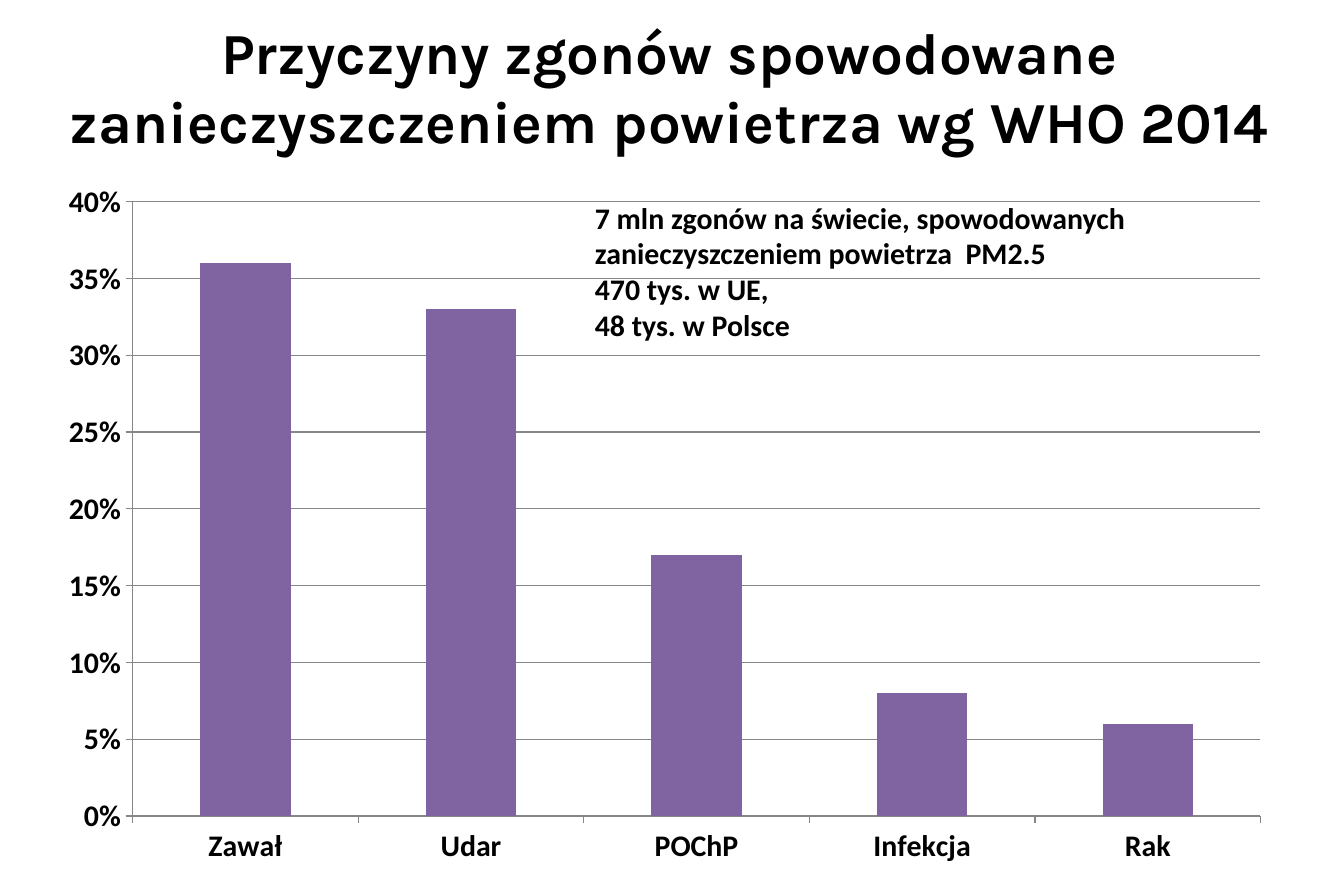
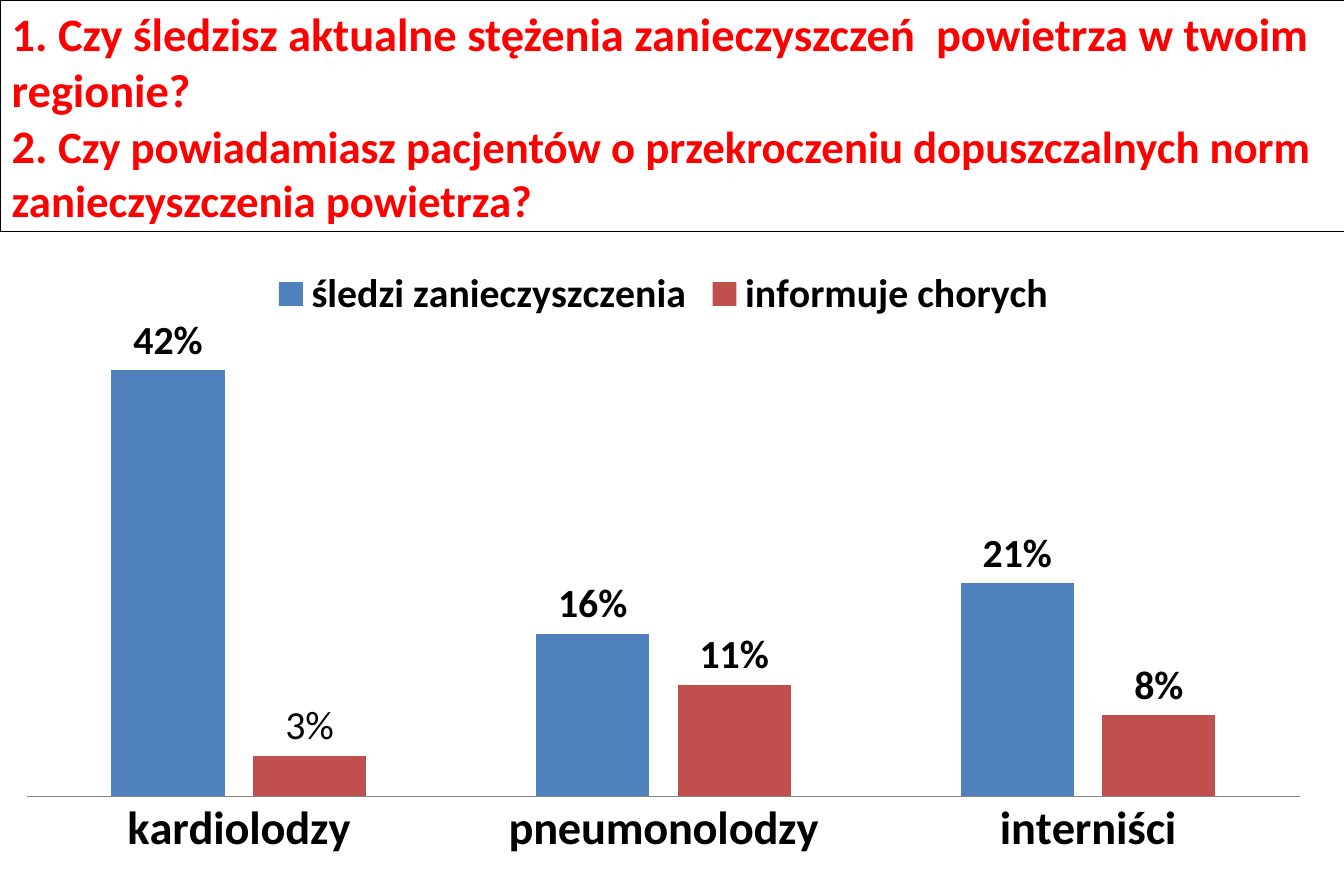
from lxml import etree
from pptx import Presentation
from pptx.chart.data import CategoryChartData
from pptx.dml.color import RGBColor
from pptx.enum.chart import (XL_CHART_TYPE, XL_LABEL_POSITION,
                             XL_LEGEND_POSITION, XL_TICK_LABEL_POSITION,
                             XL_TICK_MARK)
from pptx.enum.shapes import MSO_SHAPE
from pptx.enum.text import MSO_ANCHOR, PP_ALIGN
from pptx.oxml.ns import qn
from pptx.util import Cm, Pt

COLUMNS = XL_CHART_TYPE.COLUMN_CLUSTERED
OUTSIDE_END = XL_LABEL_POSITION.OUTSIDE_END
LEGEND_TOP = XL_LEGEND_POSITION.TOP
TICK_OUT, TICK_NONE = XL_TICK_MARK.OUTSIDE, XL_TICK_MARK.NONE
LABELS_NONE = XL_TICK_LABEL_POSITION.NONE
RECTANGLE = MSO_SHAPE.RECTANGLE
TOP, MIDDLE = MSO_ANCHOR.TOP, MSO_ANCHOR.MIDDLE
LEFT, CENTER = PP_ALIGN.LEFT, PP_ALIGN.CENTER

BLACK = RGBColor(0x00, 0x00, 0x00)
RED = RGBColor(0xFF, 0x00, 0x00)
PURPLE = RGBColor(0x80, 0x64, 0xA2)
BLUE = RGBColor(0x4F, 0x81, 0xBD)
BRICK = RGBColor(0xC0, 0x50, 0x4D)
GREY = RGBColor(0x86, 0x86, 0x86)

BODY_FONT, TITLE_FONT = "Calibri", "Karla"
PERCENT = "0%"


def style_font(font, size, bold=True, color=BLACK, name=BODY_FONT):
    for key, value in {"size": Pt(size), "bold": bold, "name": name}.items():
        setattr(font, key, value)
    font.color.rgb = color


def write_text(shape, paragraphs, align=LEFT, anchor=TOP, **font_values):
    """Each paragraph is a list of (text, size) spans; None breaks the line."""
    frame = shape.text_frame
    frame.word_wrap = True
    frame.vertical_anchor = anchor
    for index, spans in enumerate(paragraphs):
        para = frame.add_paragraph() if index else frame.paragraphs[0]
        para.alignment = align
        for span in spans:
            if span is None:
                para.add_line_break()
                continue
            run = para.add_run()
            run.text = span[0]
            style_font(run.font, span[1], **font_values)


def add_text(page, box, paragraphs, **text_values):
    write_text(page.shapes.add_textbox(*box), paragraphs, **text_values)


def add_framed_title(page, box, paragraphs, **text_values):
    frame = page.shapes.add_shape(RECTANGLE, *box)
    frame.shadow.inherit = False
    frame.fill.background()
    frame.line.color.rgb = BLACK
    frame.line.width = Pt(0.75)
    write_text(frame, paragraphs, **text_values)


def place_plot(chart, **area):
    """Fix the inner plot area as fractions of the chart."""
    plot_area = chart._chartSpace.chart.plotArea
    for old in plot_area.findall(qn("c:layout")):
        plot_area.remove(old)
    layout = etree.Element(qn("c:layout"))
    manual = etree.SubElement(layout, qn("c:manualLayout"))
    settings = {"layoutTarget": "inner", "xMode": "edge", "yMode": "edge", **area}
    for tag, value in settings.items():
        etree.SubElement(manual, qn("c:" + tag)).set("val", str(value))
    plot_area.insert(0, layout)


def add_columns(page, box, categories, series, maximum, step, area, overlap=0):
    """Each series is a (name, values, color) tuple."""
    data = CategoryChartData(number_format=PERCENT)
    data.categories = categories
    for name, values, _ in series:
        data.add_series(name, values)
    chart = page.shapes.add_chart(COLUMNS, *box, data).chart
    chart.has_title = False
    chart.has_legend = False
    style_font(chart.font, 18)
    plot = chart.plots[0]
    for key, value in {"gap_width": 150, "overlap": overlap,
                       "vary_by_categories": False}.items():
        setattr(plot, key, value)
    for columns, (_, _, color) in zip(plot.series, series):
        columns.format.fill.solid()
        columns.format.fill.fore_color.rgb = color
    scale = {"minimum_scale": 0, "maximum_scale": maximum, "major_unit": step}
    for key, value in scale.items():
        setattr(chart.value_axis, key, value)
    for axis in (chart.category_axis, chart.value_axis):
        axis.format.line.color.rgb = GREY
        axis.major_tick_mark = TICK_OUT
    place_plot(chart, **area)
    return chart


def build_causes(page):
    add_text(page, (Cm(0), Cm(-0.08), Cm(28.47), Cm(3.81)),
             [[("Przyczyny zgonów spowodowane zanieczyszczeniem powietrza "
                "wg WHO 2014", 35)]],
             align=CENTER, anchor=MIDDLE, name=TITLE_FONT)

    # Causes of death
    chart = add_columns(
        page, (Cm(0.28), Cm(3.53), Cm(28.22), Cm(15.19)),
        ["Zawał", "Udar", "POChP", "Infekcja", "Rak"],
        [("Series 1", (0.36, 0.33, 0.17, 0.08, 0.06), PURPLE)],
        maximum=0.4, step=0.05, area={"x": 0.09, "y": 0.05, "w": 0.85, "h": 0.86})
    values = chart.value_axis
    values.has_major_gridlines = True
    values.major_gridlines.format.line.color.rgb = GREY
    values.tick_labels.number_format = PERCENT
    values.tick_labels.number_format_is_linked = False

    # Death toll over the chart
    lines = ["7 mln zgonów na świecie, spowodowanych zanieczyszczeniem powietrza  PM2.5",
             "470 tys. w UE,", "48 tys. w Polsce"]
    add_text(page, (Cm(12.4), Cm(4.11), Cm(12.29), Cm(3.33)),
             [[(line, 18)] for line in lines])


def build_survey(page):
    add_framed_title(
        page, (Cm(0), Cm(0), Cm(28.68), Cm(4.93)),
        [[("1. Czy śledzisz aktualne stężenia zanieczyszczeń  powietrza "
           "w twoim regionie?", 28), None, ("2. ", 28),
          ("Czy powiadamiasz pacjentów o przekroczeniu dopuszczalnych norm "
           "zanieczyszczenia powietrza?", 27)]],
        anchor=MIDDLE, color=RED)

    # Answers by specialty
    chart = add_columns(
        page, (Cm(0), Cm(5.38), Cm(28.22), Cm(13.13)),
        ["kardiolodzy", "pneumonolodzy", "interniści"],
        [("śledzi zanieczyszczenia", (0.42, 0.16, 0.21), BLUE),
         ("informuje chorych", (0.04, 0.11, 0.08), BRICK)],
        maximum=0.45, step=0.05, overlap=-25,
        area={"x": 0.02, "y": 0.14, "w": 0.96, "h": 0.74})
    values = chart.value_axis
    values.has_major_gridlines = False
    values.major_tick_mark = TICK_NONE
    values.tick_label_position = LABELS_NONE
    values.format.line.fill.background()
    chart.category_axis.major_tick_mark = TICK_NONE
    style_font(chart.category_axis.tick_labels.font, 28)

    # Legend
    chart.has_legend = True
    chart.legend.position = LEGEND_TOP
    chart.legend.include_in_layout = False
    style_font(chart.legend.font, 24)

    # Column labels, one with its own wording
    for columns in chart.plots[0].series:
        labels = columns.data_labels
        for key, value in {"show_value": True, "position": OUTSIDE_END,
                           "number_format": PERCENT,
                           "number_format_is_linked": False}.items():
            setattr(labels, key, value)
        style_font(labels.font, 24)
    label = chart.plots[0].series[1].points[0].data_label
    run = label.text_frame.paragraphs[0].add_run()
    run.text = "3%"
    style_font(run.font, 24, bold=False)
    label.position = OUTSIDE_END


def main():
    deck = Presentation()
    deck.slide_width, deck.slide_height = Cm(28.58), Cm(19.05)
    for build in (build_causes, build_survey):
        build(deck.slides.add_slide(deck.slide_layouts[6]))
    deck.save("out.pptx")


if __name__ == "__main__":
    main()
